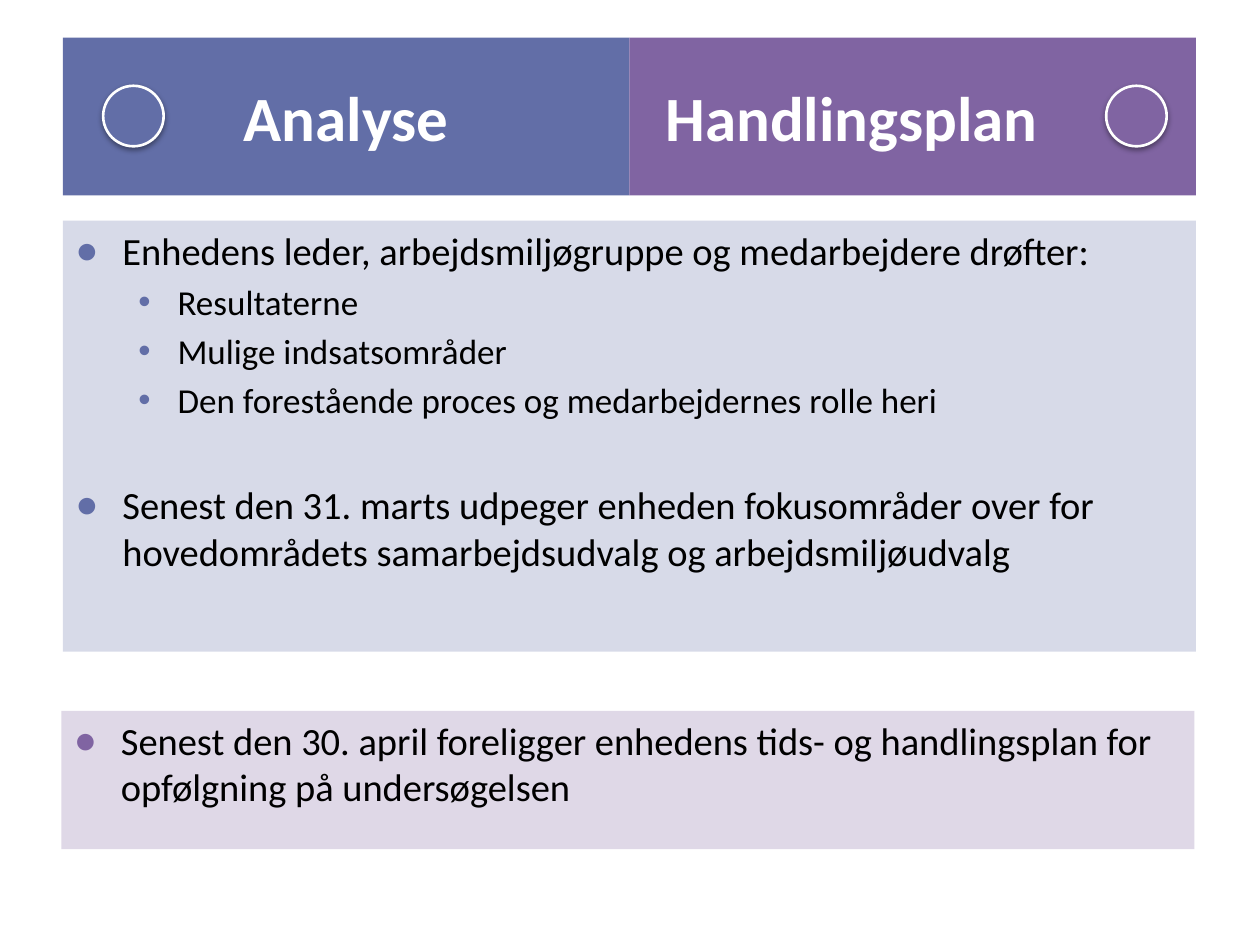
"""Build the slide on analysis and action plan with two headings and two text panels."""
from lxml import etree
from pptx import Presentation
from pptx.dml.color import RGBColor
from pptx.enum.shapes import MSO_SHAPE as Shape
from pptx.enum.text import MSO_ANCHOR as Anchor, PP_ALIGN as Align
from pptx.oxml import parse_xml
from pptx.oxml.ns import nsdecls, qn
from pptx.util import Cm, Pt

BLUE, PURPLE, WHITE, BLACK = "626EA7", "8064A2", "FFFFFF", "000000"
LEFT, TOP, HALF, HEADING_HEIGHT = 1.27, 0.76, 11.42, 3.18
CIRCLE_TOP, CIRCLE_SIZE = 1.73, 1.22


def add_block(kind, left, top, width, height, fill, alpha=None):
    shape = slide.shapes.add_shape(kind, Cm(left), Cm(top), Cm(width), Cm(height))
    shape.shadow.inherit = False
    shape.fill.solid()
    shape.fill.fore_color.rgb = RGBColor.from_string(fill)
    shape.line.fill.background()
    if alpha:
        color = shape.fill._xPr.find(qn("a:solidFill"))[0]
        etree.SubElement(color, qn("a:alpha"), val=str(alpha * 1000))
    shape.text_frame.word_wrap = True
    return shape


def write(paragraph, text, size=22, color=BLACK, bold=False, align=Align.LEFT,
          bullet=None, bullet_color=BLUE, margin=0, indent=0, level=0, before=0):
    paragraph.text = text
    if bullet:
        properties = paragraph._p.get_or_add_pPr()
        properties.set("marL", str(Cm(margin)))
        properties.set("indent", str(Cm(-indent)))
        bullet_fill = etree.SubElement(properties, qn("a:buClr"))
        etree.SubElement(bullet_fill, qn("a:srgbClr"), val=bullet_color)
        etree.SubElement(properties, qn("a:buFont"), typeface="Arial")
        etree.SubElement(properties, qn("a:buChar"), char=bullet)
    paragraph.level = level
    paragraph.alignment = align
    paragraph.space_before = Pt(before)
    font = paragraph.runs[0].font
    font.name, font.size, font.bold = "Calibri", Pt(size), bold
    font.color.rgb = RGBColor.from_string(color)


presentation = Presentation()
presentation.slide_width, presentation.slide_height = Cm(25.4), Cm(19.05)
slide = presentation.slides.add_slide(presentation.slide_layouts[6])

headings = [
    ("Analyse", LEFT, BLUE, Align.CENTER, 0.25),
    ("Handlingsplan", LEFT + HALF, PURPLE, Align.LEFT, 0.73),
]
for text, left, color, align, inset in headings:
    heading = add_block(Shape.RECTANGLE, left, TOP, HALF, HEADING_HEIGHT, color)
    heading.text_frame.vertical_anchor = Anchor.MIDDLE
    heading.text_frame.margin_left = Cm(inset)
    write(heading.text_frame.paragraphs[0], text, size=36, color=WHITE, bold=True, align=align)

main = dict(bullet="●", margin=0.95, indent=0.95)
sub = dict(bullet="•", margin=2.06, indent=0.79, size=20, level=1, before=4)
panels = [
    (LEFT, 4.45, 8.69, BLUE, [
        ("Enhedens leder, arbejdsmiljøgruppe og medarbejdere drøfter:", main),
        ("Resultaterne", sub),
        ("Mulige indsatsområder", sub),
        ("Den forestående proces og medarbejdernes rolle heri", sub),
        ("Senest den 31. marts udpeger enheden fokusområder over for "
         "hovedområdets samarbejdsudvalg og arbejdsmiljøudvalg", dict(main, before=35)),
    ]),
    (1.24, 14.33, 2.79, PURPLE, [
        ("Senest den 30. april foreligger enhedens tids- og handlingsplan for "
         "opfølgning på undersøgelsen", main),
    ]),
]
for left, top, height, color, items in panels:
    panel = add_block(Shape.RECTANGLE, left, top, 2 * HALF, height, color, alpha=25)
    frame = panel.text_frame
    frame.vertical_anchor = Anchor.TOP
    for index, (text, style) in enumerate(items):
        paragraph = frame.add_paragraph() if index else frame.paragraphs[0]
        write(paragraph, text, bullet_color=color, **style)

for left, color in [(2.08, BLUE), (22.3, PURPLE)]:
    circle = add_block(Shape.OVAL, left, CIRCLE_TOP, CIRCLE_SIZE, CIRCLE_SIZE, color)
    circle.line.color.rgb = RGBColor.from_string(WHITE)
    circle.line.width = Pt(1.5)
    effects = circle._element.spPr.find(qn("a:effectLst"))
    effects.append(parse_xml(
        f'<a:outerShdw {nsdecls("a")} blurRad="{Pt(3.1)}" dist="{Pt(1.6)}" dir="5400000" '
        'rotWithShape="0"><a:srgbClr val="000000"><a:alpha val="38000"/></a:srgbClr></a:outerShdw>'))

presentation.save("out.pptx")
